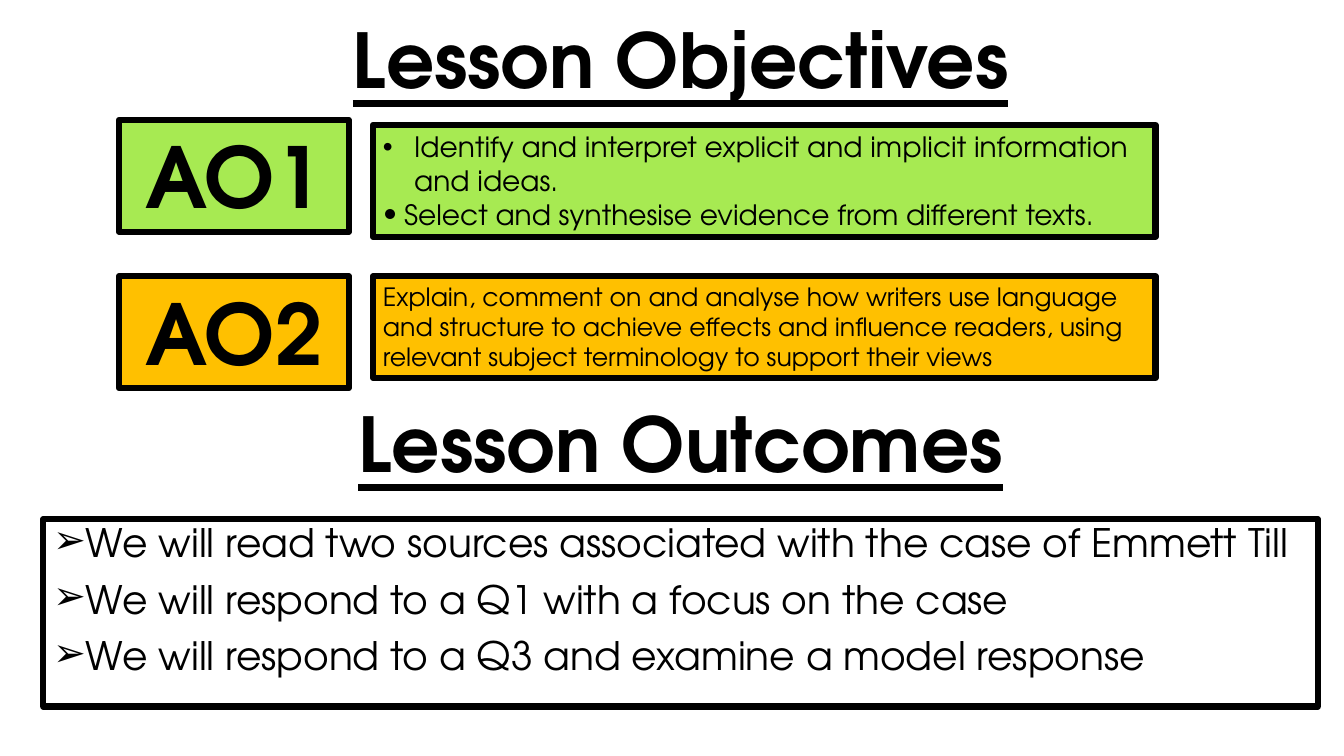
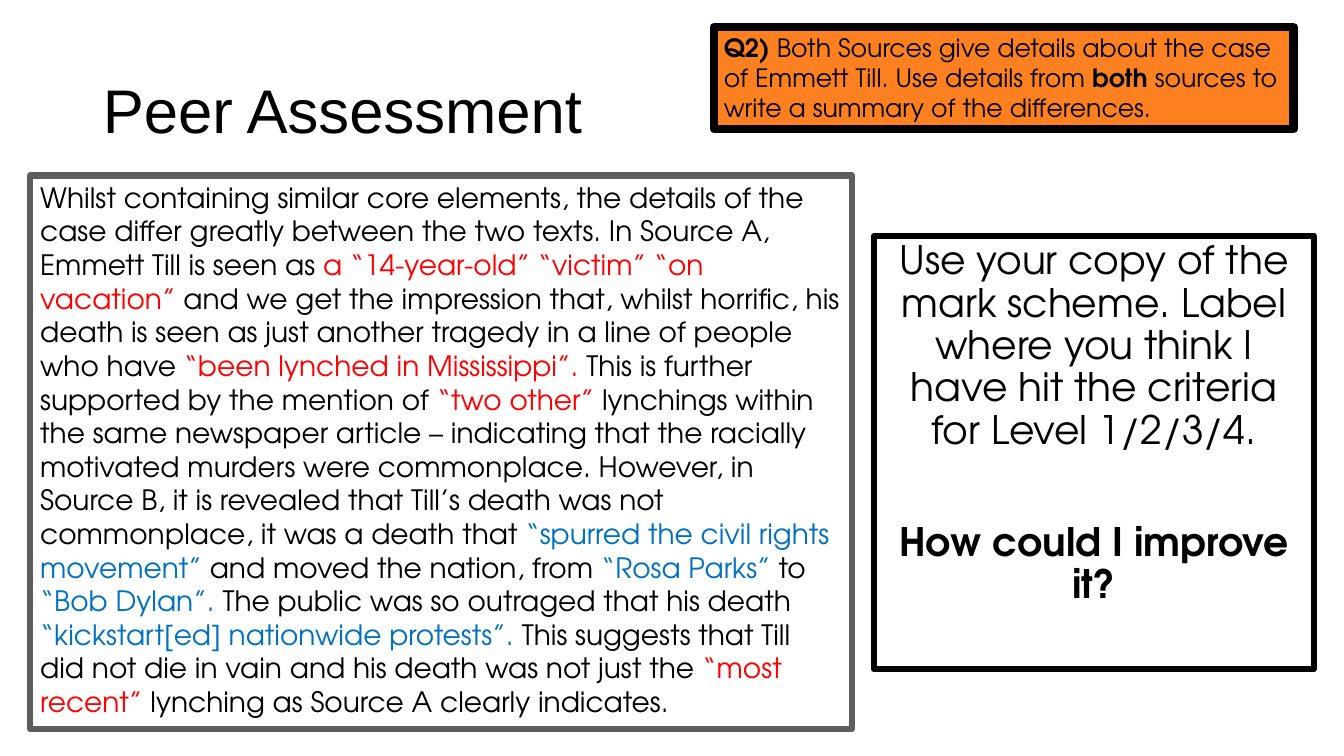
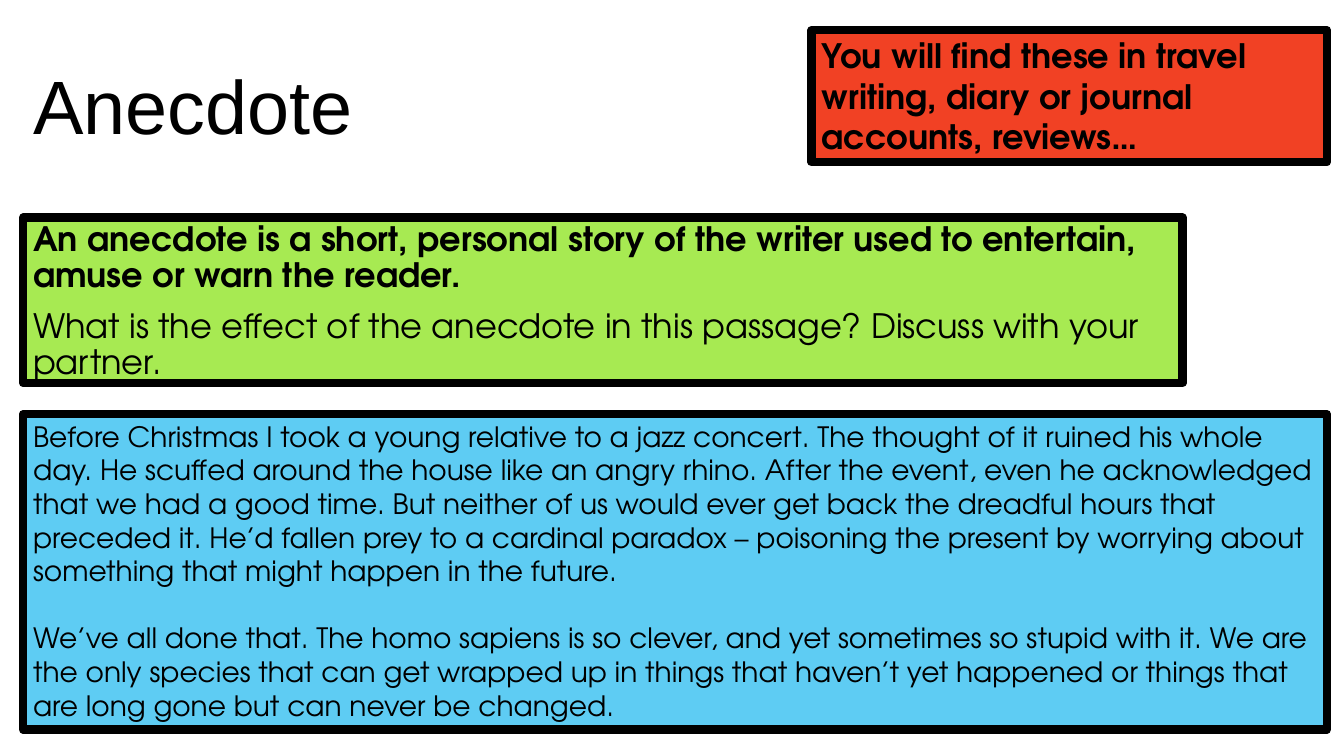
from dataclasses import dataclass

from lxml.etree import SubElement
from pptx import Presentation
from pptx.dml.color import RGBColor
from pptx.enum.shapes import MSO_SHAPE as Shape
from pptx.enum.text import MSO_ANCHOR as Anchor, MSO_AUTO_SIZE as AutoSize, PP_ALIGN as Align
from pptx.oxml.ns import qn
from pptx.util import Inches, Pt


@dataclass(frozen=True)
class Theme:
    # Colours
    black: str = "000000"
    white: str = "FFFFFF"
    grey: str = "5E5E5E"
    green: str = "A7EA52"
    amber: str = "FFC000"
    orange: str = "FF8021"
    scarlet: str = "F14124"
    sky: str = "5ECCF3"
    source_a: str = "FF0000"
    source_b: str = "0070C0"
    # Fonts, type sizes and border widths
    title_font: str = "Arial"
    body_font: str = "TeX Gyre Adventor"
    label: int = 60
    heading: int = 54
    title: int = 44
    large: int = 28
    medium: int = 24
    normal: int = 20
    small: int = 18
    border: float = 4.5
    thick_border: float = 6


THEME = Theme()
BOLD = {"bold": True}
QUOTE_A = {"color": THEME.source_a}
QUOTE_B = {"color": THEME.source_b}
HEADING = {"size": THEME.heading, "bold": True, "underline": True, "align": Align.CENTER}


# Text

def add_bullet(paragraph, character, indent, font):
    properties = paragraph._p.get_or_add_pPr()
    properties.set("marL", str(Inches(indent)))
    properties.set("indent", str(-Inches(indent)))
    SubElement(properties, qn("a:buFont")).set("typeface", font)
    SubElement(properties, qn("a:buChar")).set("char", character)


def format_run(run, size, font, color, bold, underline):
    run.font.size = Pt(size)
    run.font.name = font
    run.font.color.rgb = RGBColor.from_string(color)
    run.font.bold = bold
    run.font.underline = underline


def write_text(shape, paragraphs, size=THEME.normal, font=THEME.body_font,
               color=THEME.black, bold=False, underline=False, align=Align.LEFT,
               spacing=1.0, gap=0, bullets=(), anchor=Anchor.TOP):
    """Each paragraph is a string or a list of strings and (string, format) pairs."""
    frame = shape.text_frame
    frame.word_wrap = True
    frame.auto_size = AutoSize.NONE
    frame.vertical_anchor = anchor
    base = {"size": size, "font": font, "color": color, "bold": bold, "underline": underline}
    for index, content in enumerate(paragraphs):
        paragraph = frame.add_paragraph() if index else frame.paragraphs[0]
        paragraph.alignment = align
        paragraph.line_spacing = spacing
        paragraph.space_before = Pt(gap if index else 0)
        if bullets:
            add_bullet(paragraph, *bullets[index])
        for part in [content] if isinstance(content, str) else content:
            text, changes = (part, {}) if isinstance(part, str) else part
            run = paragraph.add_run()
            run.text = text
            format_run(run, **{**base, **changes})


# Elements

def add_panel(slide, box, fill, paragraphs, line=THEME.black, width=THEME.border, **text_format):
    shape = slide.shapes.add_shape(Shape.RECTANGLE, *map(Inches, box))
    shape.shadow.inherit = False
    shape.fill.solid()
    shape.fill.fore_color.rgb = RGBColor.from_string(fill)
    shape.line.color.rgb = RGBColor.from_string(line)
    shape.line.width = Pt(width)
    write_text(shape, paragraphs, **text_format)


def add_titled_slide(presentation, title, box, **text_format):
    slide = presentation.slides.add_slide(presentation.slide_layouts[5])
    placeholder = slide.shapes.title
    placeholder.left, placeholder.top, placeholder.width, placeholder.height = map(Inches, box)
    write_text(placeholder, [title], **text_format)
    return slide


# Slides

def build_objectives(presentation):
    slide = add_titled_slide(presentation, "Lesson Objectives", (3.35, 0.08, 6.8, 1.01), **HEADING)

    # Objectives: a label and its description
    objectives = [
        ("AO1", THEME.green, 1.19, (1.24, 1.11), [
            "Identify and interpret explicit and implicit information and ideas.",
            "Select and synthesise evidence from different texts.",
        ], {"size": THEME.normal,
            "bullets": [("•", 0.31, THEME.title_font), ("•", 0.21, THEME.body_font)]}),
        ("AO2", THEME.amber, 2.74, (2.74, 1.01), [
            "Explain, comment on and analyse how writers use language and structure to achieve "
            "effects and influence readers, using relevant subject terminology to support "
            "their views",
        ], {"size": THEME.small}),
    ]
    for label, fill, label_top, (top, height), description, text_format in objectives:
        add_panel(slide, (1.18, label_top, 2.28, 1.11), fill, [label],
                  size=THEME.label, bold=True, align=Align.CENTER)
        add_panel(slide, (3.7, top, 7.76, height), fill, description, **text_format)

    # Outcomes
    heading = slide.shapes.add_textbox(*map(Inches, (3.35, 3.89, 6.8, 1.01)))
    write_text(heading, ["Lesson Outcomes"], **HEADING)
    outcomes = [
        "We will read two sources associated with the case of Emmett Till",
        "We will respond to a Q1 with a focus on the case",
        "We will respond to a Q3 and examine a model response",
    ]
    add_panel(slide, (0.43, 5.15, 12.64, 1.86), THEME.white, outcomes, size=THEME.large,
              spacing=0.9, gap=10, bullets=[("➢", 0.25, THEME.body_font)] * len(outcomes))


def build_peer_assessment(presentation):
    slide = add_titled_slide(presentation, "Peer Assessment", (0.92, 0.4, 6, 1.45),
                             size=THEME.title, font=THEME.title_font, spacing=0.9,
                             anchor=Anchor.MIDDLE)

    # Task
    add_panel(slide, (8.67, 2.34, 4.36, 4.3), THEME.white, [
        "Use your copy of the mark scheme. Label where you think I have hit the criteria "
        "for Level 1/2/3/4.",
        [("How could I improve it?", BOLD)],
    ], size=THEME.large, align=Align.CENTER, spacing=0.9, gap=50)

    # Model response, with quotations coloured by source
    add_panel(slide, (0.3, 1.74, 8.15, 5.49), THEME.white, [[
        "Whilst containing similar core elements, the details of the case differ greatly "
        "between the two texts. In Source A, Emmett Till is seen as ",
        ("a “14-year-old” “victim” “on vacation” ", QUOTE_A),
        "and we get the impression that, whilst horrific, his death is seen as just another "
        "tragedy in a line of people who have ",
        ("“been lynched in Mississippi”. ", QUOTE_A),
        "This is further supported by the mention of ",
        ("“two other” ", QUOTE_A),
        "lynchings within the same newspaper article – indicating that the racially motivated "
        "murders were commonplace. However, in Source B, it is revealed that Till’s death was "
        "not commonplace, it was a death that ",
        ("“spurred the civil rights movement” ", QUOTE_B),
        "and moved the nation, from ",
        ("“Rosa Parks” ", QUOTE_B),
        "to ",
        ("“Bob Dylan”. ", QUOTE_B),
        "The public was so outraged that his death ",
        ("“kickstart[ed] nationwide protests”. ", QUOTE_B),
        "This suggests that Till did not die in vain and his death was not just the ",
        ("“most recent” ", QUOTE_A),
        "lynching as Source A clearly indicates.",
    ]], line=THEME.grey)

    # Question
    add_panel(slide, (7.08, 0.27, 5.75, 1.01), THEME.orange, [[
        ("Q2) ", BOLD),
        "Both Sources give details about the case of Emmett Till. Use details from ",
        ("both", BOLD),
        " sources to write a summary of the differences.",
    ]], width=THEME.thick_border, size=THEME.small)


def build_anecdote(presentation):
    slide = add_titled_slide(presentation, "Anecdote", (0.23, 0.64, 4.47, 0.91),
                             size=THEME.heading, font=THEME.title_font, spacing=0.9,
                             anchor=Anchor.MIDDLE)

    # Definition and question
    add_panel(slide, (0.23, 2.16, 11.5, 1.64), THEME.green, [
        [("An anecdote is a short, personal story of the writer used to entertain, amuse or "
          "warn the reader.", BOLD)],
        "What is the effect of the anecdote in this passage? Discuss with your partner.",
    ], width=THEME.thick_border, size=THEME.medium, spacing=0.9, gap=10)

    # Where to find them
    add_panel(slide, (8.05, 0.3, 5.11, 1.31), THEME.scarlet, [
        "You will find these in travel writing, diary or journal accounts, reviews…",
    ], width=THEME.thick_border, size=THEME.medium, bold=True)

    # Passage
    add_panel(slide, (0.23, 4.11, 12.93, 3.13), THEME.sky, [
        "Before Christmas I took a young relative to a jazz concert. The thought of it ruined "
        "his whole day. He scuffed around the house like an angry rhino. After the event, even "
        "he acknowledged that we had a good time. But neither of us would ever get back the "
        "dreadful hours that preceded it. He’d fallen prey to a cardinal paradox – poisoning "
        "the present by worrying about something that might happen in the future.",
        "We’ve all done that. The homo sapiens is so clever, and yet sometimes so stupid with "
        "it. We are the only species that can get wrapped up in things that haven’t yet "
        "happened or things that are long gone but can never be changed.",
    ], width=THEME.thick_border, gap=24)


def main():
    presentation = Presentation()
    presentation.slide_width = Inches(13.33)
    presentation.slide_height = Inches(7.5)
    build_objectives(presentation)
    build_peer_assessment(presentation)
    build_anecdote(presentation)
    presentation.save("out.pptx")


if __name__ == "__main__":
    main()
